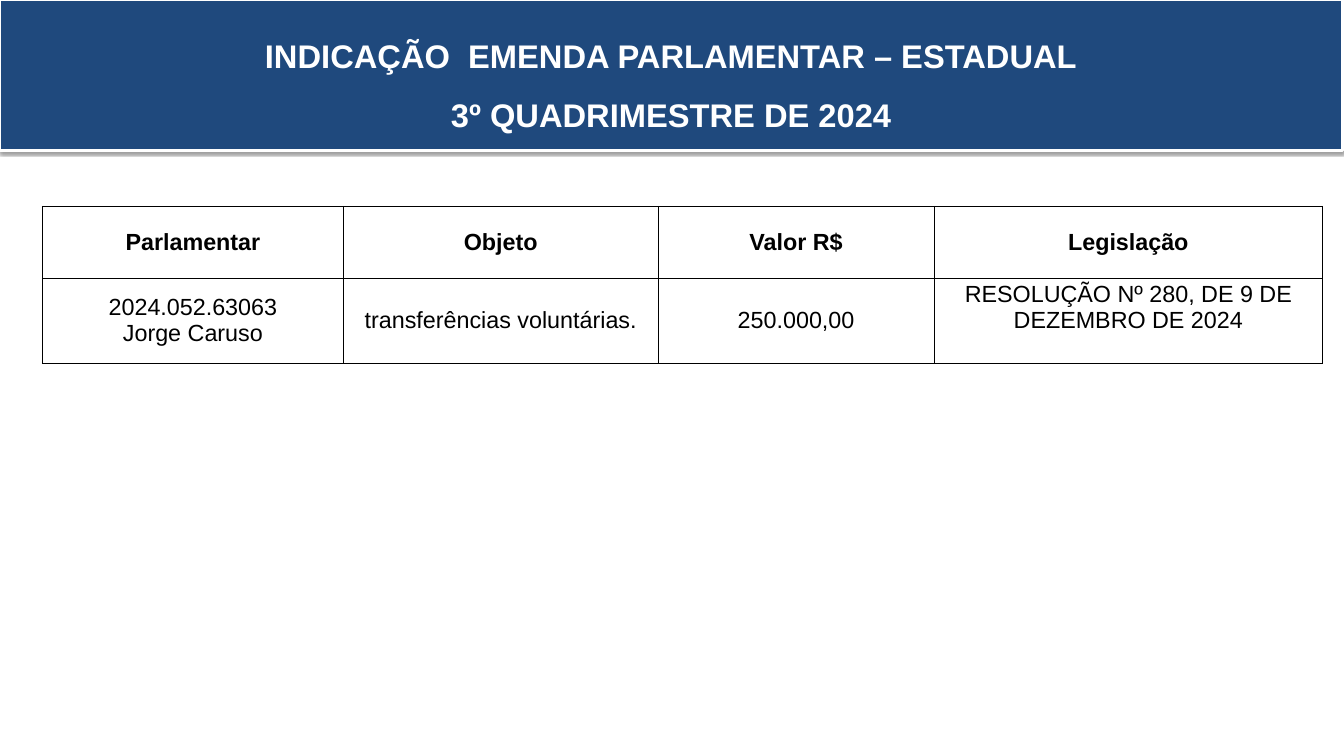
from dataclasses import dataclass

from lxml import etree
from pptx import Presentation
from pptx.dml.color import RGBColor
from pptx.enum import shapes, text
from pptx.oxml import ns
from pptx.util import Pt


@dataclass(frozen=True)
class Theme:
    font: str = "Arial"
    navy: str = "1F497D"
    white: str = "FFFFFF"
    black: str = "000000"
    title: float = 35
    body: float = 25


THEME = Theme()
TITLE = ["INDICAÇÃO  EMENDA PARLAMENTAR – ESTADUAL", "3º QUADRIMESTRE DE 2024"]
ROWS = [
    ["Parlamentar", "Objeto", "Valor R$", "Legislação"],
    ["2024.052.63063\nJorge Caruso", "transferências voluntárias.", "250.000,00",
     "RESOLUÇÃO Nº 280, DE 9 DE DEZEMBRO DE 2024"],
]
WIDTHS = [322.5, 337, 296, 416]
HEIGHTS = [77, 91.5]


def rgb(code):
    return RGBColor.from_string(code)


def add(parent, tag, **attrs):
    return etree.SubElement(parent, ns.qn(tag), attrs)


def write(frame, lines, size, color, bold, space=1.0):
    """Fill a text frame with centred lines in one style."""
    frame.text = "\n".join(lines)
    for par in frame.paragraphs:
        par.alignment = text.PP_ALIGN.CENTER
        par.line_spacing = space
        font = par.font
        font.name, font.size, font.bold = THEME.font, Pt(size), bold
        font.color.rgb = rgb(color)


def drop_shadow(shape):
    shape.shadow.inherit = False
    effects = shape._element.spPr.find(ns.qn("a:effectLst"))
    outer = add(effects, "a:outerShdw", blurRad=str(Pt(3.1)), dist=str(Pt(1.6)),
                dir="5400000", rotWithShape="0")
    color = add(outer, "a:srgbClr", val=THEME.black)
    add(color, "a:alpha", val="38000")


def add_banner(slide):
    box = slide.shapes.add_shape(shapes.MSO_SHAPE.RECTANGLE, 0, 0, Pt(1438.5), Pt(161.3))
    box.fill.solid()
    box.fill.fore_color.rgb = rgb(THEME.navy)
    box.line.color.rgb = rgb(THEME.white)
    box.line.width = Pt(3)
    drop_shadow(box)
    box.text_frame.vertical_anchor = text.MSO_ANCHOR.MIDDLE
    write(box.text_frame, TITLE, THEME.title, THEME.white, True, 1.5)


def add_borders(cell):
    props = cell._tc.get_or_add_tcPr()
    for spot, side in enumerate(("a:lnL", "a:lnR", "a:lnT", "a:lnB")):
        line = etree.Element(ns.qn(side), w=str(Pt(1)))
        add(add(line, "a:solidFill"), "a:srgbClr", val=THEME.black)
        props.insert(spot, line)


def style_cell(cell, words, bold):
    cell.fill.background()
    add_borders(cell)
    cell.margin_left = cell.margin_right = Pt(3.6)
    cell.margin_top = cell.margin_bottom = 0
    cell.vertical_anchor = text.MSO_ANCHOR.MIDDLE
    write(cell.text_frame, words.split("\n"), THEME.body, THEME.black, bold)


def add_grid(slide):
    grid = slide.shapes.add_table(len(ROWS), len(WIDTHS), Pt(45.4), Pt(221),
                                  Pt(sum(WIDTHS)), Pt(sum(HEIGHTS))).table
    grid.horz_banding = False
    grid.first_row = False
    for col, width in zip(grid.columns, WIDTHS):
        col.width = Pt(width)
    for r, (row, height) in enumerate(zip(grid.rows, HEIGHTS)):
        row.height = Pt(height)
        for cell, words in zip(row.cells, ROWS[r]):
            style_cell(cell, words, r == 0)
    law = grid.cell(1, 3)
    law.vertical_anchor = text.MSO_ANCHOR.TOP
    law.margin_top = Pt(3.6)


def main():
    deck = Presentation()
    deck.slide_width, deck.slide_height = Pt(1440), Pt(810)
    slide = deck.slides.add_slide(deck.slide_layouts[6])
    add_banner(slide)
    add_grid(slide)
    deck.save("out.pptx")


if __name__ == "__main__":
    main()
